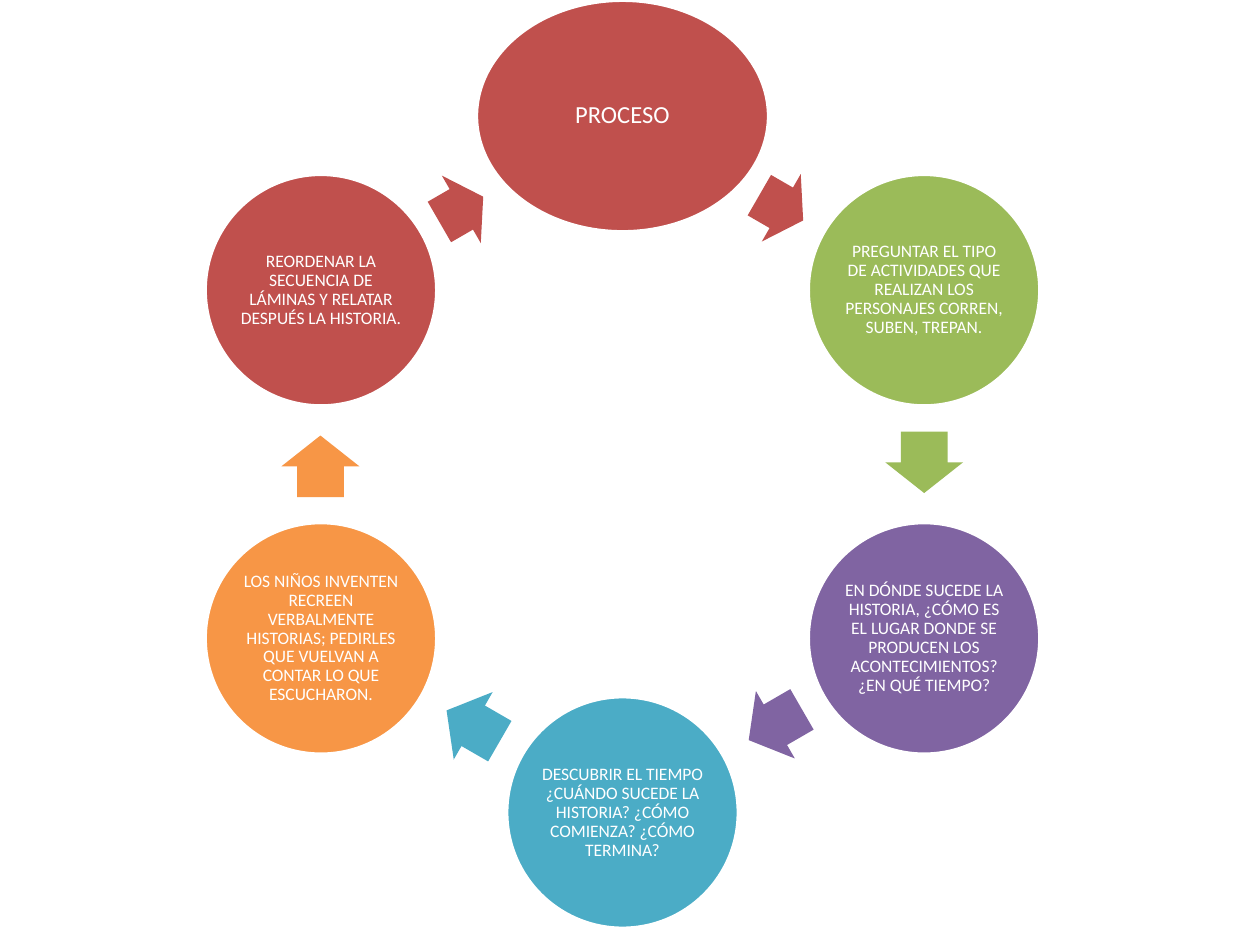
from math import cos, radians, sin

from pptx import Presentation
from pptx.dml.color import RGBColor
from pptx.enum.shapes import MSO_SHAPE
from pptx.enum.text import MSO_ANCHOR, PP_ALIGN
from pptx.util import Cm, Pt

COLORS = {
    "white": "FFFFFF",
    "red": "C0504D",
    "green": "9BBB59",
    "purple": "8064A2",
    "blue": "4BACC6",
    "orange": "F79646",
}

# All lengths in centimetres
RING_X, RING_Y, RING_RADIUS = 12.55, 9.36, 7.02
STEP_SIZE = 4.67
START_WIDTH = 5.89
ARROW_HEIGHT = 1.57

# Text, colour, then centre and length of the arrow to the next step
STEPS = [
    ("PROCESO", "red", (15.75, 4.19), 1.02),
    ("PREGUNTAR EL TIPO DE ACTIVIDADES QUE REALIZAN LOS PERSONAJES CORREN, "
     "SUBEN, TREPAN.", "green", (18.63, 9.32), 1.24),
    ("EN DÓNDE SUCEDE LA HISTORIA, ¿CÓMO ES EL LUGAR DONDE SE PRODUCEN LOS "
     "ACONTECIMIENTOS? ¿EN QUÉ TIEMPO?", "purple", (15.63, 14.61), 1.24),
    ("DESCUBRIR EL TIEMPO ¿CUÁNDO SUCEDE LA HISTORIA? ¿CÓMO COMIENZA? "
     "¿CÓMO TERMINA?", "blue", (9.54, 14.63), 1.24),
    ("LOS NIÑOS INVENTEN RECREEN VERBALMENTE HISTORIAS; PEDIRLES QUE VUELVAN "
     "A CONTAR LO QUE ESCUCHARON.", "orange", (6.46, 9.4), 1.24),
    ("REORDENAR LA SECUENCIA DE LÁMINAS Y RELATAR DESPUÉS LA HISTORIA.",
     "red", (9.3, 4.22), 1.02),
]


class CycleSlide:
    """Holds the slide and the style of its steps and arrows."""

    font_name = "Calibri"
    outline = Pt(2)

    def __init__(self, slide):
        self.slide = slide

    def centred_shape(self, kind, center, width, height, color):
        x, y = center
        shape = self.slide.shapes.add_shape(
            kind, Cm(x - width / 2), Cm(y - height / 2), Cm(width), Cm(height))
        shape.shadow.inherit = False
        shape.fill.solid()
        shape.fill.fore_color.rgb = RGBColor.from_string(COLORS[color])
        return shape

    def step(self, text, center, width, color, size, inset):
        ellipse = self.centred_shape(
            MSO_SHAPE.OVAL, center, width, STEP_SIZE, color)
        ellipse.line.color.rgb = RGBColor.from_string(COLORS["white"])
        ellipse.line.width = self.outline
        frame = ellipse.text_frame
        frame.word_wrap = True
        frame.vertical_anchor = MSO_ANCHOR.MIDDLE
        frame.margin_left = frame.margin_right = Cm(inset)
        frame.margin_top = frame.margin_bottom = Cm(inset)
        paragraph = frame.paragraphs[0]
        paragraph.text = text
        paragraph.alignment = PP_ALIGN.CENTER
        paragraph.line_spacing = 0.9
        paragraph.font.name = self.font_name
        paragraph.font.size = Pt(size)
        paragraph.font.color.rgb = RGBColor.from_string(COLORS["white"])

    def arrow(self, center, length, rotation, color):
        arrow = self.centred_shape(
            MSO_SHAPE.RIGHT_ARROW, center, length, ARROW_HEIGHT, color)
        arrow.line.fill.background()
        arrow.adjustments[0] = 0.6
        arrow.adjustments[1] = 0.5
        arrow.rotation = rotation


def main():
    presentation = Presentation()
    presentation.slide_width = Cm(25.4)
    presentation.slide_height = Cm(19.05)
    blank_layout = presentation.slide_layouts[6]
    cycle = CycleSlide(presentation.slides.add_slide(blank_layout))

    turn = 360 / len(STEPS)
    for index, (text, color, arrow_center, arrow_length) in enumerate(STEPS):
        angle = radians(index * turn - 90)
        center = (RING_X + RING_RADIUS * cos(angle),
                  RING_Y + RING_RADIUS * sin(angle))
        if index == 0:
            cycle.step(text, center, START_WIDTH, color, size=14, inset=0.05)
        else:
            cycle.step(text, center, STEP_SIZE, color, size=10, inset=0.03)
        cycle.arrow(arrow_center, arrow_length, (index + 0.5) * turn, color)

    presentation.save("out.pptx")


if __name__ == "__main__":
    main()
